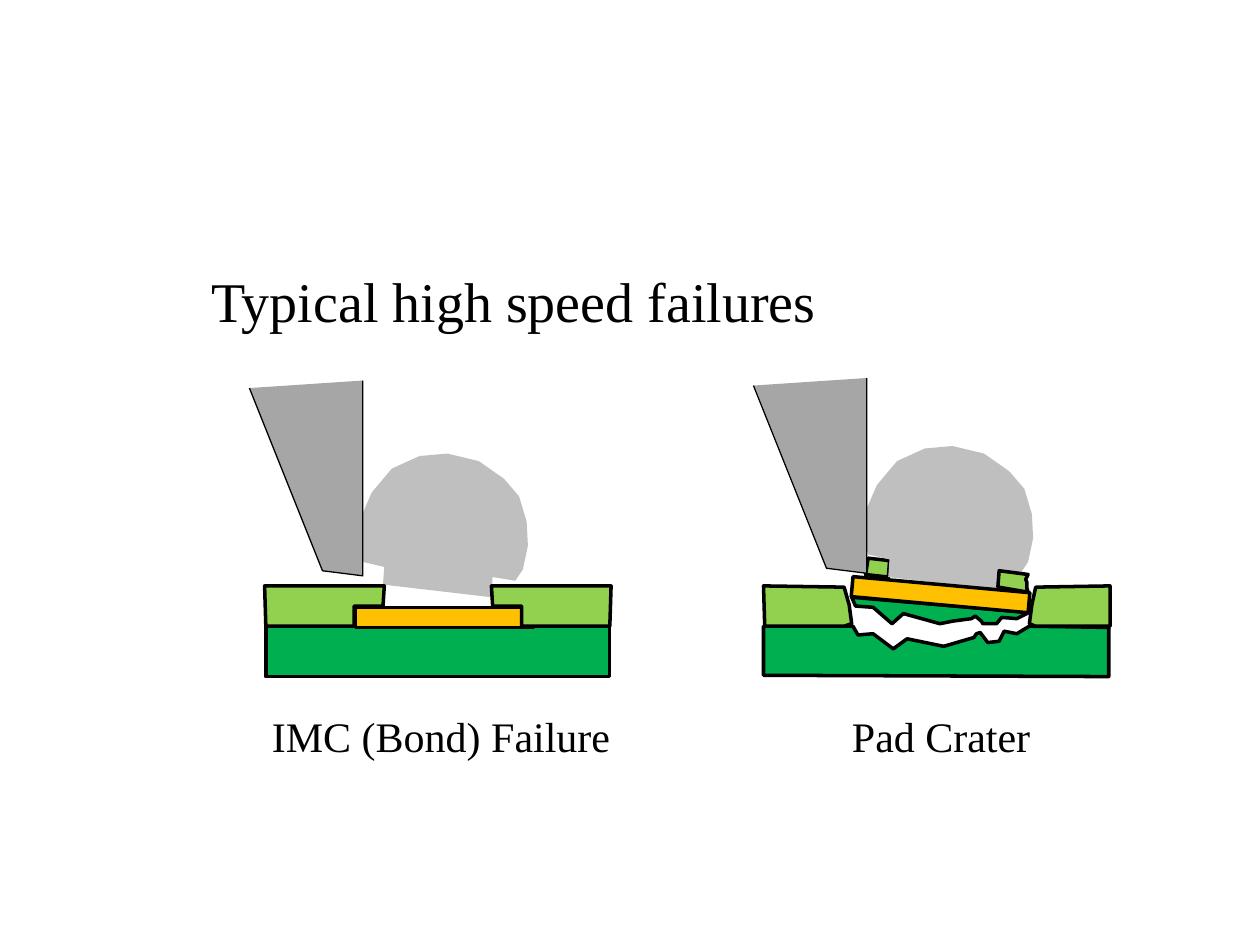
from dataclasses import dataclass

from pptx import Presentation
from pptx.dml.color import RGBColor
from pptx.enum.shapes import MSO_SHAPE
from pptx.enum.text import PP_ALIGN
from pptx.util import Inches, Pt

RECTANGLE = MSO_SHAPE.RECTANGLE
LEFT, CENTER = PP_ALIGN.LEFT, PP_ALIGN.CENTER


@dataclass(frozen=True)
class Theme:
    font: str = "Times New Roman"
    title_size: int = 32
    caption_size: int = 24
    ink: str = "000000"
    solder: str = "BFBFBF"
    tool: str = "A6A6A6"
    mask: str = "92D050"
    laminate: str = "00B050"
    copper: str = "FFC000"
    outline: float = 2
    thin: float = 0.75


THEME = Theme()

# Outlines in inches from the top left of the part or panel they belong to
TOOL = [(0.9, 0), (0.9, 1.55), (0.58, 1.51), (0, 0.06)]
BALL = [(0.19, 1.04), (0.2, 0.9), (0.03, 0.86), (0, 0.75), (0, 0.54), (0.1, 0.31),
        (0.26, 0.12), (0.48, 0.02), (0.7, 0), (0.95, 0.06), (1.15, 0.2),
        (1.27, 0.34), (1.33, 0.54), (1.34, 0.73), (1.3, 0.92), (1.24, 1.01),
        (1.06, 0.98), (1.05, 1.14)]
BOND_MASK = [(0.12, 1.63), (1.07, 1.63), (1.06, 1.79), (0.83, 1.79),
             (0.83, 1.95), (0.13, 1.95)]
BOND_MIRROR = 2.99  # sum of the x values of two mirrored points
TORN_LAMINATE = [(0.78, 1.74), (2.19, 1.86), (2.09, 1.91), (1.97, 1.9), (1.93, 1.95),
                 (1.82, 1.95), (1.81, 1.93), (1.76, 1.89), (1.73, 1.91), (1.58, 1.93),
                 (1.48, 1.95), (1.19, 1.87), (1.1, 1.95), (0.95, 1.82), (0.81, 1.81)]
CRATER = [(0.08, 2.36), (0.08, 1.97), (0.79, 1.97), (0.83, 2.04), (0.95, 2.03),
          (1.11, 2.15), (1.22, 2.07), (1.51, 2.13), (1.75, 2.06), (1.77, 2.03),
          (1.8, 2.02), (1.86, 2.1), (1.95, 2.09), (1.99, 2.01), (2.09, 2.03),
          (2.19, 1.97), (2.82, 1.98), (2.82, 2.37)]
CRATER_MASKS = [
    [(0.09, 1.97), (0.08, 1.65), (0.72, 1.66), (0.76, 1.8), (0.78, 1.95), (0.72, 1.97)],
    [(2.83, 1.97), (2.83, 1.65), (2.24, 1.66), (2.21, 1.8), (2.19, 1.95), (2.24, 1.97)],
]
LEFT_FRAGMENT = [(0.91, 1.43), (1.08, 1.45), (1.07, 1.58), (0.89, 1.56)]
RIGHT_FRAGMENT = [(1.94, 1.66), (1.95, 1.53), (2.18, 1.56), (2.16, 1.6),
                  (2.17, 1.62), (2.17, 1.67), (2.18, 1.7)]


def paint(shape, fill, width):
    shape.shadow.inherit = False
    shape.fill.solid()
    shape.fill.fore_color.rgb = RGBColor.from_string(fill)
    if width:
        shape.line.width = Pt(width)
        shape.line.color.rgb = RGBColor.from_string(THEME.ink)
    else:
        shape.line.fill.background()


def add_outline(slide, left, top, points, fill, width=THEME.outline, close=True):
    start, *rest = [(Inches(left + x), Inches(top + y)) for x, y in points]
    builder = slide.shapes.build_freeform(*start)
    builder.add_line_segments(rest, close=close)
    paint(builder.convert_to_shape(), fill, width)


def add_block(slide, left, top, width, height, fill, rotation=0):
    block = slide.shapes.add_shape(RECTANGLE, Inches(left), Inches(top),
                                   Inches(width), Inches(height))
    block.rotation = rotation
    paint(block, fill, THEME.outline)


def add_label(slide, left, top, width, height, wording, size, align=LEFT):
    frame = slide.shapes.add_textbox(Inches(left), Inches(top),
                                     Inches(width), Inches(height)).text_frame
    frame.word_wrap = True
    paragraph = frame.paragraphs[0]
    paragraph.text = wording
    paragraph.alignment = align
    for name, value in {"name": THEME.font, "size": Pt(size)}.items():
        setattr(paragraph.font, name, value)
    paragraph.font.color.rgb = RGBColor.from_string(THEME.ink)


def add_tool(slide, left, top):
    add_outline(slide, left, top, TOOL, THEME.tool, THEME.thin, close=False)


def add_ball(slide, left, top):
    add_outline(slide, left, top, BALL, THEME.solder, width=0)


def add_bond_failure(slide, left, top):
    """Ball sheared off a pad that stays on the board."""
    add_block(slide, left + 0.13, top + 1.8, 2.73, 0.55, THEME.laminate)
    add_block(slide, left + 0.84, top + 1.8, 1.41, 0.16, THEME.copper)
    add_ball(slide, left + 0.87, top + 0.58)
    add_tool(slide, left, top)
    mirrored = [(BOND_MIRROR - x, y) for x, y in BOND_MASK]
    for mask in (BOND_MASK, mirrored):
        add_outline(slide, left, top, mask, THEME.mask)
    add_label(slide, left + 0.08, top + 2.57, 3.08, 1.33,
              "IMC (Bond) Failure", THEME.caption_size)


def add_pad_crater(slide, left, top):
    """Ball torn off together with its pad and some laminate."""
    add_outline(slide, left, top, LEFT_FRAGMENT, THEME.mask)
    add_ball(slide, left + 0.88, top + 0.54)
    add_outline(slide, left, top, TORN_LAMINATE, THEME.laminate)
    add_block(slide, left + 0.78, top + 1.64, 1.41, 0.16, THEME.copper, rotation=5.2)
    add_outline(slide, left, top, CRATER, THEME.laminate)
    for mask in CRATER_MASKS:
        add_outline(slide, left, top, mask, THEME.mask)
    add_tool(slide, left, top)
    add_label(slide, left + 0.29, top + 2.59, 2.4, 1.33,
              "Pad Crater", THEME.caption_size, CENTER)
    add_outline(slide, left, top, RIGHT_FRAGMENT, THEME.mask)


def main():
    deck = Presentation()
    deck.slide_width, deck.slide_height = Inches(10), Inches(7.5)
    slide = deck.slides.add_slide(deck.slide_layouts[6])
    add_label(slide, 1.58, 2.07, 8.42, 1.33,
              "Typical high speed failures", THEME.title_size)
    add_bond_failure(slide, 1.98, 3.02)
    add_pad_crater(slide, 5.98, 3)
    deck.save("out.pptx")


if __name__ == "__main__":
    main()
